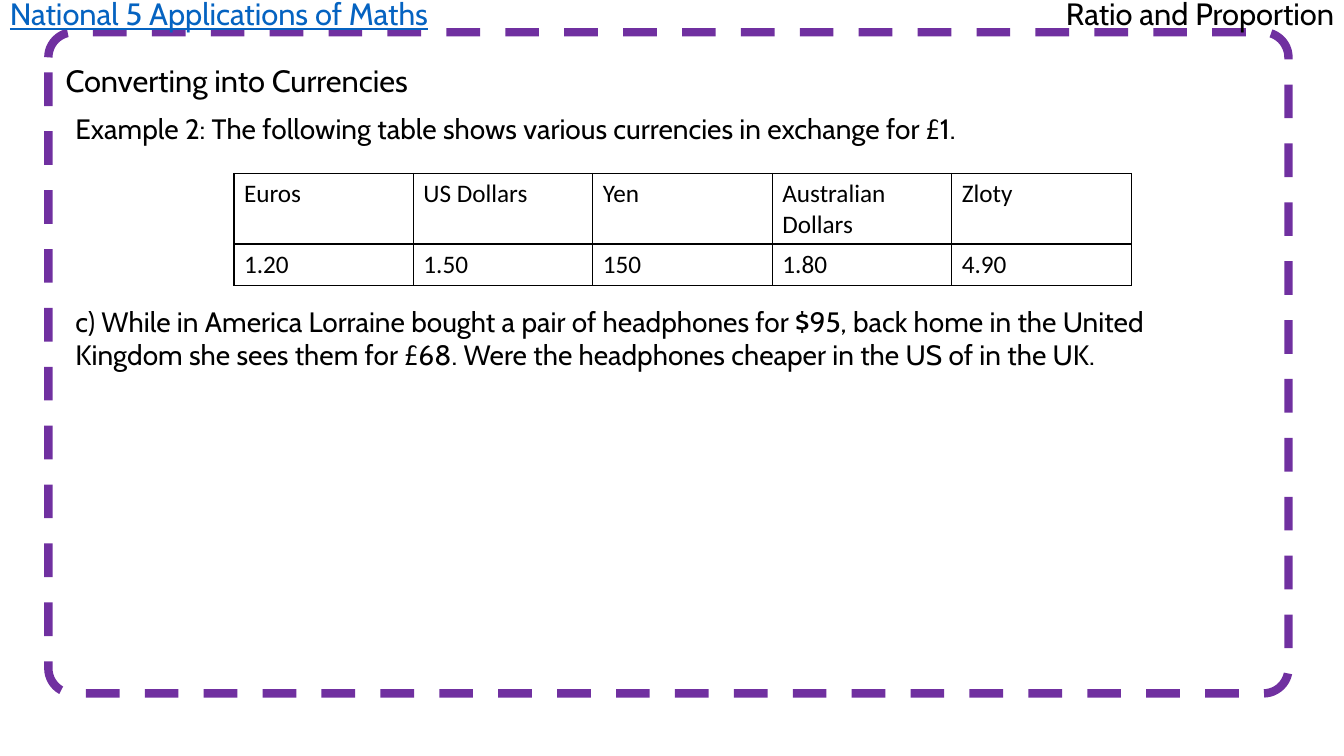
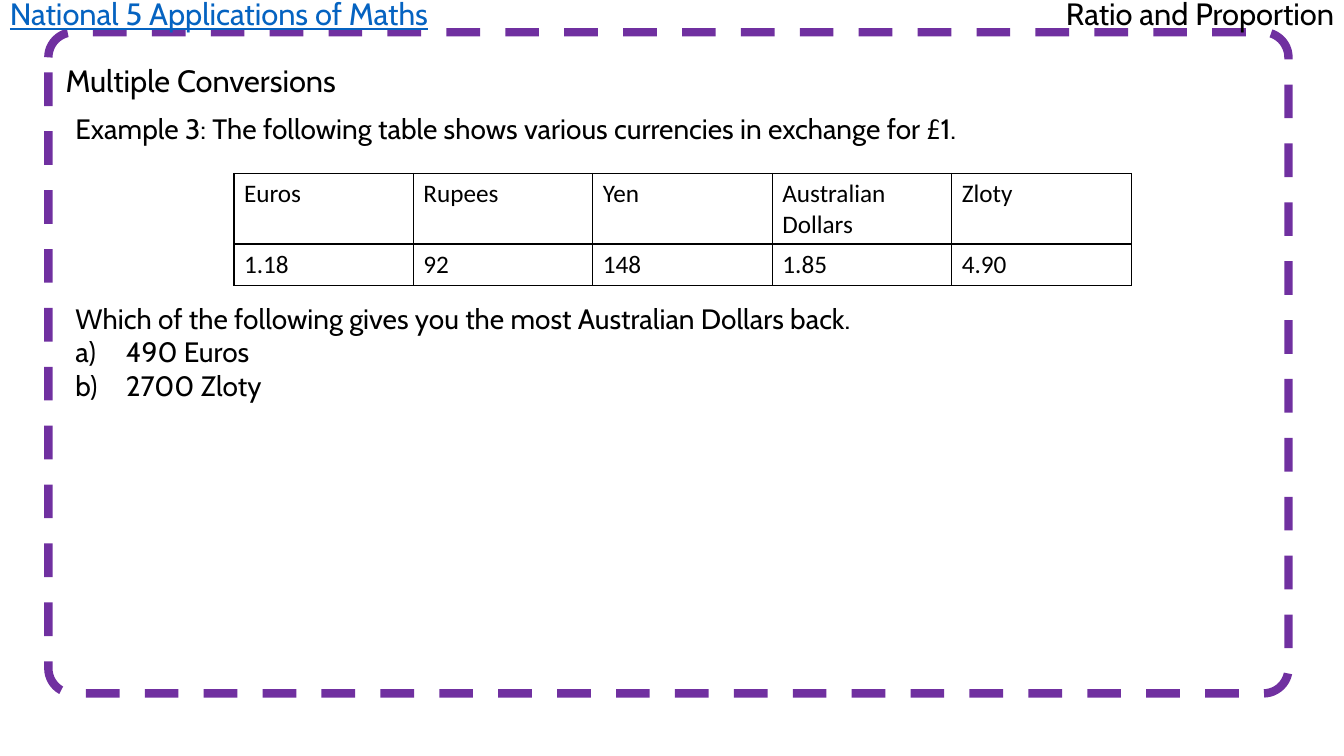
import pptx
import pptx.util
import pptx.dml.color
import pptx.enum.dml
import pptx.enum.shapes
import pptx.enum.text
import pptx.oxml.ns
from lxml import etree

Inches, Pt = pptx.util.Inches, pptx.util.Pt
RGBColor = pptx.dml.color.RGBColor
PP_ALIGN = pptx.enum.text.PP_ALIGN

COURSE = "National 5 Applications of Maths"
TOPIC = "Ratio and Proportion"
SLIDES = [
    {
        "title": "Converting into Currencies",
        "intro": "Example 2: The following table shows various currencies in exchange for £1.",
        "rates": [("Euros", "1.20"), ("US Dollars", "1.50"), ("Yen", "150"),
                  ("Australian Dollars", "1.80"), ("Zloty", "4.90")],
        "question": "c) While in America Lorraine bought a pair of headphones for $95, back home in the "
                    "United Kingdom she sees them for £68. Were the headphones cheaper in the US of in the UK.",
        "question_top": 2.97,
        "options": [],
    },
    {
        "title": "Multiple Conversions",
        "intro": "Example 3: The following table shows various currencies in exchange for £1.",
        "rates": [("Euros", "1.18"), ("Rupees", "92"), ("Yen", "148"),
                  ("Australian Dollars", "1.85"), ("Zloty", "4.90")],
        "question": "Which of the following gives you the most Australian Dollars back.",
        "question_top": 2.94,
        "options": ["490 Euros", "2700 Zloty"],
    },
]

BLACK = RGBColor(0x00, 0x00, 0x00)
PURPLE = RGBColor(0x70, 0x30, 0xA0)
LINK_BLUE = RGBColor(0x05, 0x63, 0xC1)
BODY_FONT, TABLE_FONT = "Cabin", "Calibri"
WIDTH, HEIGHT = 13.33, 7.5
HEADER_TOP, HEADER_WIDTH, LINE_HEIGHT = -0.1, 5, 0.47
BODY_LEFT, BODY_WIDTH = 0.65, 11.71
TABLE_LEFT, TABLE_TOP, COLUMN_WIDTH = 2.32, 1.72, 1.78
ROW_HEIGHTS = (0.7, 0.41)


def write(tf, text, size=20, font=BODY_FONT, color=BLACK, underline=None,
          align=PP_ALIGN.LEFT, new=False):
    p = tf.add_paragraph() if new else tf.paragraphs[0]
    p.alignment = align
    r = p.add_run()
    r.text = text
    r.font.size = Pt(size)
    r.font.name = font
    r.font.color.rgb = color
    r.font.underline = underline
    return p


def add_text(slide, text, left, top, width, height=LINE_HEIGHT, **style):
    sp = slide.shapes.add_textbox(Inches(left), Inches(top), Inches(width), Inches(height))
    sp.text_frame.word_wrap = True
    write(sp.text_frame, text, **style)
    return sp.text_frame


def add_frame(slide):
    sp = slide.shapes.add_shape(pptx.enum.shapes.MSO_SHAPE.ROUNDED_RECTANGLE,
                                Inches(0.48), Inches(0.32), Inches(12.3), Inches(6.56))
    sp.adjustments[0] = 0.038
    sp.shadow.inherit = False
    sp.fill.background()
    sp.line.color.rgb = PURPLE
    sp.line.width = Pt(6)
    sp.line.dash_style = pptx.enum.dml.MSO_LINE.DASH


def set_title(slide, text):
    sp = slide.shapes.title
    sp.left, sp.top, sp.width, sp.height = (Inches(v) for v in (0.55, 0.56, 8, LINE_HEIGHT))
    tf = sp.text_frame
    tf.auto_size = pptx.enum.text.MSO_AUTO_SIZE.NONE
    tf.vertical_anchor = pptx.enum.text.MSO_ANCHOR.TOP
    write(tf, text, size=22)


def add_borders(cell):
    qn = pptx.oxml.ns.qn
    tcPr = cell._tc.get_or_add_tcPr()
    for side in ("lnL", "lnR", "lnT", "lnB"):
        ln = etree.SubElement(tcPr, qn("a:" + side), w=str(Pt(1)))
        fill = etree.SubElement(ln, qn("a:solidFill"))
        etree.SubElement(fill, qn("a:srgbClr"), val=str(BLACK))


def add_rates(slide, rates):
    rows = list(zip(*rates))
    table = slide.shapes.add_table(
        len(rows), len(rates), Inches(TABLE_LEFT), Inches(TABLE_TOP),
        Inches(COLUMN_WIDTH * len(rates)), Inches(sum(ROW_HEIGHTS))).table
    table.first_row = table.horz_banding = False
    for column in table.columns:
        column.width = Inches(COLUMN_WIDTH)
    for i, row in enumerate(rows):
        table.rows[i].height = Inches(ROW_HEIGHTS[i])
        for j, text in enumerate(row):
            cell = table.cell(i, j)
            add_borders(cell)
            cell.fill.background()
            write(cell.text_frame, text, size=18, font=TABLE_FONT)


def add_option(tf, text):
    pPr = write(tf, text, new=True)._p.get_or_add_pPr()
    pPr.set("marL", str(Inches(0.5)))
    pPr.set("indent", str(Inches(-0.5)))
    qn = pptx.oxml.ns.qn
    etree.SubElement(pPr, qn("a:buFont"), typeface=BODY_FONT)
    etree.SubElement(pPr, qn("a:buAutoNum"), type="alphaLcParenR")


def add_slide(prs, content):
    slide = prs.slides.add_slide(prs.slide_layouts[5])
    add_frame(slide)
    add_text(slide, COURSE, 0, HEADER_TOP, HEADER_WIDTH, size=22, color=LINK_BLUE, underline=True)
    add_text(slide, TOPIC, WIDTH - HEADER_WIDTH, HEADER_TOP, HEADER_WIDTH, size=22,
             align=PP_ALIGN.RIGHT)
    set_title(slide, content["title"])
    add_text(slide, content["intro"], BODY_LEFT, 1.06, BODY_WIDTH)
    add_rates(slide, content["rates"])
    tf = add_text(slide, content["question"], BODY_LEFT, content["question_top"], BODY_WIDTH,
                  height=1.11 if content["options"] else 0.77)
    for option in content["options"]:
        add_option(tf, option)


def main():
    prs = pptx.Presentation()
    prs.slide_width, prs.slide_height = Inches(WIDTH), Inches(HEIGHT)
    for content in SLIDES:
        add_slide(prs, content)
    prs.save("out.pptx")


if __name__ == "__main__":
    main()
